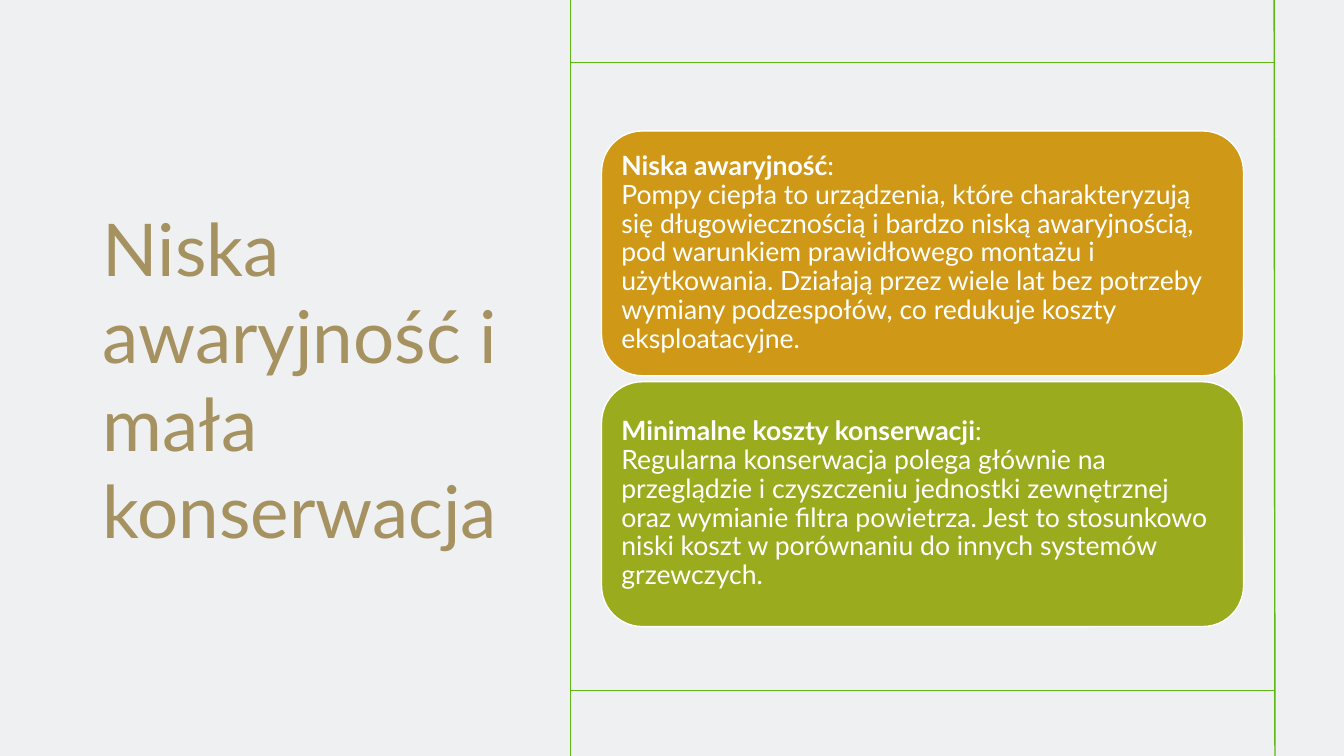
"""Build the slide on low failure rates and low maintenance of heat pumps."""
from lxml import etree
from pptx import Presentation
from pptx.dml.color import RGBColor
from pptx.enum.shapes import MSO_CONNECTOR, MSO_SHAPE
from pptx.enum.text import MSO_ANCHOR, PP_ALIGN
from pptx.oxml.ns import qn
from pptx.util import Cm, Pt

STRAIGHT = MSO_CONNECTOR.STRAIGHT
ROUNDED = MSO_SHAPE.ROUNDED_RECTANGLE
MIDDLE = MSO_ANCHOR.MIDDLE
LEFT = PP_ALIGN.LEFT

THEME = {
    "font": "Lato",
    "background": RGBColor.from_string("EEF0F1"),
    "title": RGBColor.from_string("A59260"),
    "grid": RGBColor.from_string("5FB714"),
    "white": RGBColor.from_string("FFFFFF"),
    "amber": RGBColor.from_string("CF9917"),
    "olive": RGBColor.from_string("9AAB1E"),
    "title_size": Pt(52),
    "card_size": Pt(19),
    "line_width": Pt(1),
}

WIDTH, HEIGHT = 33.87, 19.05
GRID_LEFT, GRID_RIGHT, GRID_TOP, GRID_BOTTOM = 14.38, 32.13, 1.57, 17.4
CARD_LEFT, CARD_TOP, CARD_WIDTH, CARD_HEIGHT = 15.16, 3.3, 16.18, 6.17
CARD_PITCH = 6.32


def apply_format(target, values):
    for name, value in values.items():
        setattr(target, name, value)


def add_run(paragraph, text, size, color, bold=False):
    run = paragraph.add_run()
    run.text = text
    apply_format(run.font, {"name": THEME["font"], "size": size, "bold": bold})
    run.font.color.rgb = color


presentation = Presentation()
apply_format(presentation, {"slide_width": Cm(WIDTH), "slide_height": Cm(HEIGHT)})
slide = presentation.slides.add_slide(presentation.slide_layouts[6])
slide.background.fill.solid()
slide.background.fill.fore_color.rgb = THEME["background"]

title = slide.shapes.add_textbox(Cm(2.34), Cm(1.63), Cm(11.33), Cm(15.82))
apply_format(title.text_frame, {"word_wrap": True, "vertical_anchor": MIDDLE})
add_run(title.text_frame.paragraphs[0], "Niska awaryjność i mała konserwacja",
        THEME["title_size"], THEME["title"])

grid_lines = [
    (GRID_LEFT, GRID_TOP, GRID_RIGHT, GRID_TOP),
    (GRID_LEFT, GRID_BOTTOM, GRID_RIGHT, GRID_BOTTOM),
    (GRID_LEFT, 0, GRID_LEFT, HEIGHT),
    (GRID_RIGHT - 0.02, 0, GRID_RIGHT, HEIGHT),
]
for ends in grid_lines:
    connector = slide.shapes.add_connector(STRAIGHT, *[Cm(end) for end in ends])
    connector.line.color.rgb = THEME["grid"]
    connector.line.width = THEME["line_width"]
    etree.SubElement(connector._element.spPr, qn("a:effectLst"))

cards = [
    ("amber", "Niska awaryjność",
     "Pompy ciepła to urządzenia, które charakteryzują się długowiecznością "
     "i bardzo niską awaryjnością, pod warunkiem prawidłowego montażu i "
     "użytkowania. Działają przez wiele lat bez potrzeby wymiany podzespołów, "
     "co redukuje koszty eksploatacyjne."),
    ("olive", "Minimalne koszty konserwacji",
     "Regularna konserwacja polega głównie na przeglądzie i czyszczeniu "
     "jednostki zewnętrznej oraz wymianie filtra powietrza. Jest to stosunkowo "
     "niski koszt w porównaniu do innych systemów grzewczych."),
]
card_frame = {
    "word_wrap": True, "vertical_anchor": MIDDLE,
    "margin_left": Cm(0.2), "margin_right": Cm(0.2),
    "margin_top": Cm(0.2), "margin_bottom": Cm(0.2),
}
for index, (fill, heading, body) in enumerate(cards):
    card = slide.shapes.add_shape(
        ROUNDED, Cm(CARD_LEFT), Cm(CARD_TOP + index * CARD_PITCH),
        Cm(CARD_WIDTH), Cm(CARD_HEIGHT))
    card.shadow.inherit = False
    card.fill.solid()
    card.fill.fore_color.rgb = THEME[fill]
    card.line.color.rgb = THEME["white"]
    card.line.width = THEME["line_width"]
    apply_format(card.text_frame, card_frame)
    paragraph = card.text_frame.paragraphs[0]
    apply_format(paragraph, {"alignment": LEFT, "line_spacing": 0.9})
    add_run(paragraph, heading, THEME["card_size"], THEME["white"], bold=True)
    add_run(paragraph, ":", THEME["card_size"], THEME["white"])
    paragraph.add_line_break()
    add_run(paragraph, body, THEME["card_size"], THEME["white"])

presentation.save("out.pptx")
